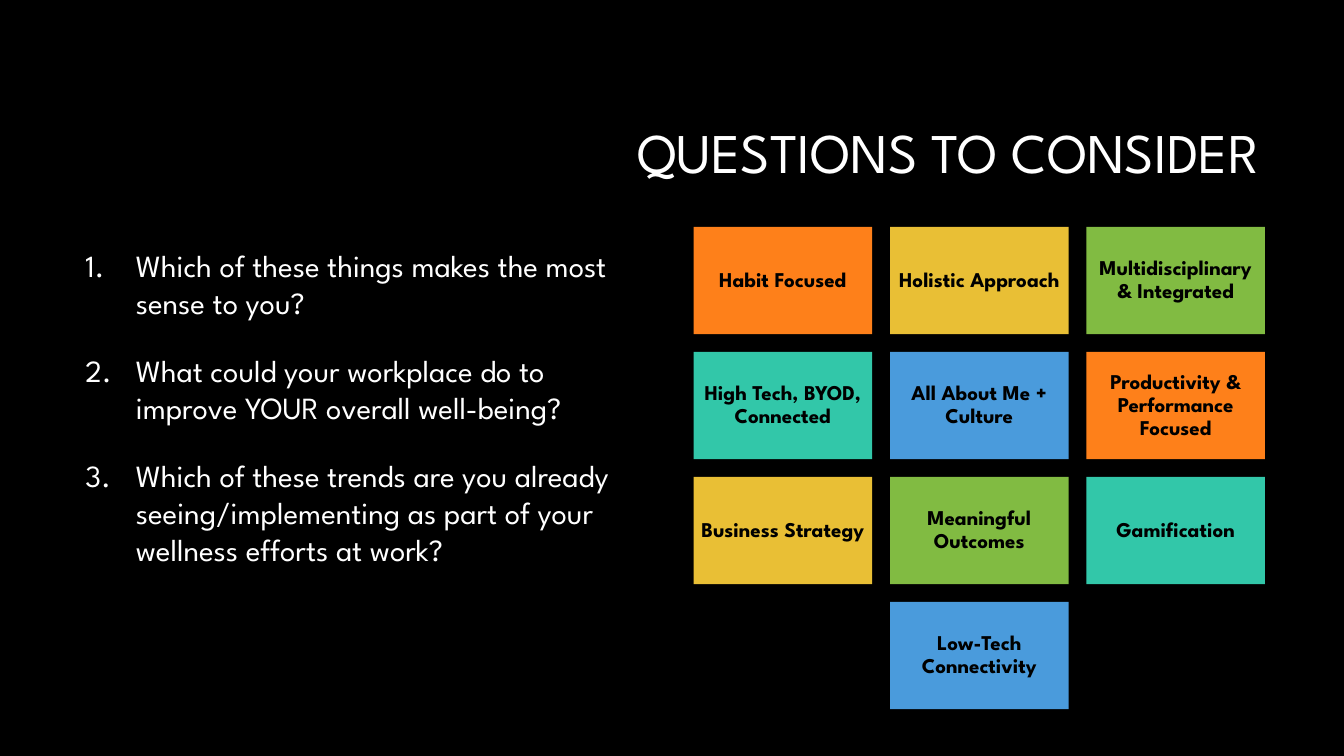
import pptx
import pptx.util
import pptx.dml.color
import pptx.enum.shapes
import pptx.enum.text
import pptx.oxml.ns
from lxml import etree

Cm = pptx.util.Cm
Pt = pptx.util.Pt
RGB = pptx.dml.color.RGBColor.from_string
ALIGN = pptx.enum.text.PP_ALIGN
ANCHOR = pptx.enum.text.MSO_ANCHOR

COLORS = {
    "black": "000000", "white": "FFFFFF", "orange": "FE801A", "yellow": "E9BF35",
    "green": "81BB42", "teal": "32C7A9", "blue": "4A9BDC",
}


def write(para, text, size=22, color="white", bold=False, align=ALIGN.LEFT,
          line=1.0, before=0, after=0):
    para.alignment = align
    para.line_spacing = line
    para.space_before = Pt(before)
    para.space_after = Pt(after)
    run = para.add_run()
    run.text = text
    run.font.name = "League Spartan"
    run.font.size = Pt(size)
    run.font.bold = bold
    run.font.color.rgb = RGB(COLORS[color])


def place(shape, left, top, width, height):
    shape.left, shape.top = Cm(left), Cm(top)
    shape.width, shape.height = Cm(width), Cm(height)


# Slide
deck = pptx.Presentation()
deck.slide_width, deck.slide_height = Cm(33.87), Cm(19.05)
slide = deck.slides.add_slide(deck.slide_layouts[1])
slide.background.fill.solid()
slide.background.fill.fore_color.rgb = RGB(COLORS["black"])

# Title
title = slide.shapes.title
place(title, 8.05, 2.13, 23.93, 3.58)
title.text_frame.auto_size = pptx.enum.text.MSO_AUTO_SIZE.NONE
title.text_frame.vertical_anchor = ANCHOR.MIDDLE
write(title.text_frame.paragraphs[0], "QUESTIONS TO CONSIDER", size=40,
      align=ALIGN.RIGHT, line=0.9)

# Numbered questions
asks = [
    "Which of these things makes the most sense to you?",
    "What could your workplace do to improve YOUR overall well-being?",
    "Which of these trends are you already seeing/implementing as part of your "
    "wellness efforts at work?",
]
body = slide.placeholders[1]
place(body, 1.9, 6.1, 14.81, 11.18)
frame = body.text_frame
frame.auto_size = pptx.enum.text.MSO_AUTO_SIZE.NONE
frame.vertical_anchor = ANCHOR.TOP
for i, ask in enumerate(asks):
    para = frame.add_paragraph() if i else frame.paragraphs[0]
    props = para._p.get_or_add_pPr()
    props.set("marL", str(Cm(1.27)))
    props.set("indent", str(Cm(-1.27)))
    num = etree.SubElement(props, pptx.oxml.ns.qn("a:buFont"))
    num.set("typeface", "+mj-lt")
    num = etree.SubElement(props, pptx.oxml.ns.qn("a:buAutoNum"))
    num.set("type", "arabicPeriod")
    write(para, ask, before=10 if i else 0, after=12)

# Trend tiles, three to a row with the last one centred
trends = [
    "Habit Focused", "Holistic Approach", "Multidisciplinary & Integrated",
    "High Tech, BYOD, Connected", "All About Me + Culture",
    "Productivity & Performance Focused",
    "Business Strategy", "Meaningful Outcomes", "Gamification",
    "Low-Tech Connectivity",
]
fills = ["orange", "yellow", "green", "teal", "blue"]
wide, high, gap = 4.5, 2.7, 0.45
for i, trend in enumerate(trends):
    row, col = divmod(i, 3)
    if i == len(trends) - 1:
        col = 1
    tile = slide.shapes.add_shape(
        pptx.enum.shapes.MSO_SHAPE.RECTANGLE,
        Cm(17.48 + col * (wide + gap)), Cm(5.72 + row * (high + gap)),
        Cm(wide), Cm(high))
    tile.shadow.inherit = False
    tile.fill.solid()
    tile.fill.fore_color.rgb = RGB(COLORS[fills[i % len(fills)]])
    tile.line.fill.background()
    frame = tile.text_frame
    frame.word_wrap = True
    frame.vertical_anchor = ANCHOR.MIDDLE
    frame.margin_left = frame.margin_right = Cm(0.15)
    frame.margin_top = frame.margin_bottom = Cm(0.15)
    write(frame.paragraphs[0], trend, size=15, color="black", bold=True,
          align=ALIGN.CENTER, line=0.9)

deck.save("out.pptx")
